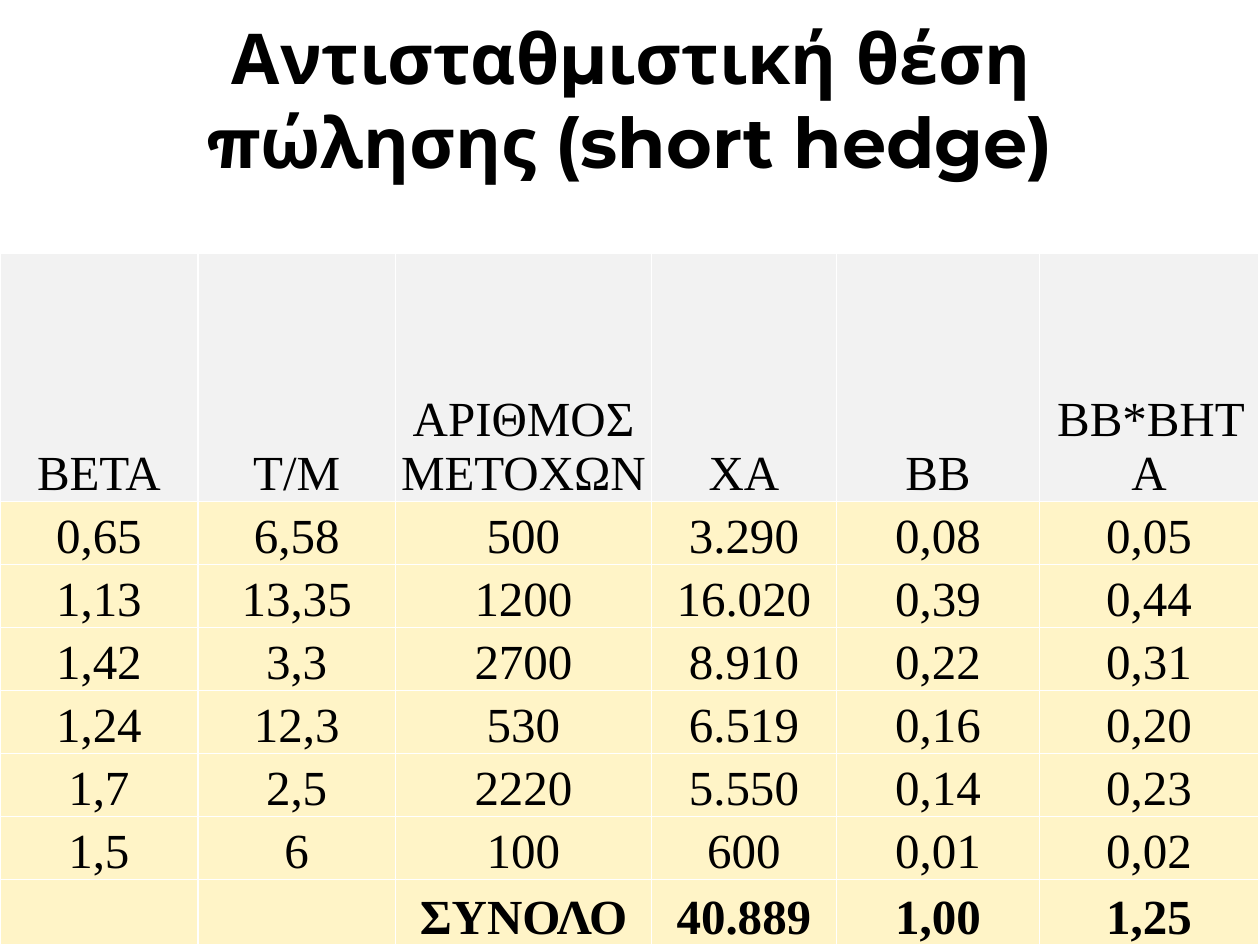
from lxml import etree
from pptx import Presentation
from pptx.dml.color import RGBColor
from pptx.enum.text import MSO_ANCHOR, MSO_AUTO_SIZE, PP_ALIGN
from pptx.oxml.ns import qn
from pptx.util import Inches, Pt

LOW = MSO_ANCHOR.BOTTOM
MID = PP_ALIGN.CENTER
FIXED = MSO_AUTO_SIZE.NONE
BLACK = RGBColor(0, 0, 0)
WHITE = RGBColor(255, 255, 255)
GRAY = RGBColor(0xF2, 0xF2, 0xF2)
CREAM = RGBColor(0xFF, 0xF4, 0xC7)

COLS = [1.57, 1.57, 2.03, 1.47, 1.61, 1.74]
ROWS = [1.97] + [0.5] * 6 + [0.52]
DATA = [
    ["ΒΕΤΑ", "Τ/Μ", "ΑΡΙΘΜΟΣ ΜΕΤΟΧΩΝ", "ΧΑ", "ΒΒ", "ΒΒ*ΒΗΤΑ"],
    ["0,65", "6,58", "500", "3.290", "0,08", "0,05"],
    ["1,13", "13,35", "1200", "16.020", "0,39", "0,44"],
    ["1,42", "3,3", "2700", "8.910", "0,22", "0,31"],
    ["1,24", "12,3", "530", "6.519", "0,16", "0,20"],
    ["1,7", "2,5", "2220", "5.550", "0,14", "0,23"],
    ["1,5", "6", "100", "600", "0,01", "0,02"],
    ["", "", "ΣΥΝΟΛΟ", "40.889", "1,00", "1,25"],
]


def style(para, face, size, bold):
    para.alignment = MID
    for run in para.runs:
        run.font.name = face
        run.font.size = Pt(size)
        run.font.bold = bold
        run.font.color.rgb = BLACK


def edge(cell):
    props = cell._tc.get_or_add_tcPr()
    for side in ("lnL", "lnR", "lnT", "lnB"):
        line = etree.SubElement(props, qn("a:" + side), w=str(Pt(1)))
        fill = etree.SubElement(line, qn("a:solidFill"))
        etree.SubElement(fill, qn("a:srgbClr"), val=str(WHITE))


deck = Presentation()
deck.slide_width = Inches(10)
deck.slide_height = Inches(7.5)
slide = deck.slides.add_slide(deck.slide_layouts[5])

title = slide.shapes.title
title.left, title.top = Inches(0.44), 0
title.width, title.height = Inches(9.14), Inches(1.5)
frame = title.text_frame
frame.text = "Αντισταθμιστική θέση πώλησης (short hedge)"
frame.word_wrap = True
frame.auto_size = FIXED
frame.vertical_anchor = LOW
style(frame.paragraphs[0], "Montserrat", 40, True)

high = Inches(sum(ROWS))
table = slide.shapes.add_table(
    len(ROWS), len(COLS), 0, deck.slide_height - high, deck.slide_width, high
).table
for col, width in zip(table.columns, COLS):
    col.width = Inches(width)
for row, height in zip(table.rows, ROWS):
    row.height = Inches(height)

last = len(DATA) - 1
for r, words in enumerate(DATA):
    for c, word in enumerate(words):
        cell = table.cell(r, c)
        edge(cell)
        cell.fill.solid()
        cell.fill.fore_color.rgb = CREAM if r else GRAY
        cell.vertical_anchor = LOW
        cell.margin_left = cell.margin_right = cell.margin_top = Inches(0.01)
        cell.margin_bottom = 0
        cell.text_frame.text = word
        style(cell.text_frame.paragraphs[0], "Times New Roman", 28, r == last)

deck.save("out.pptx")
